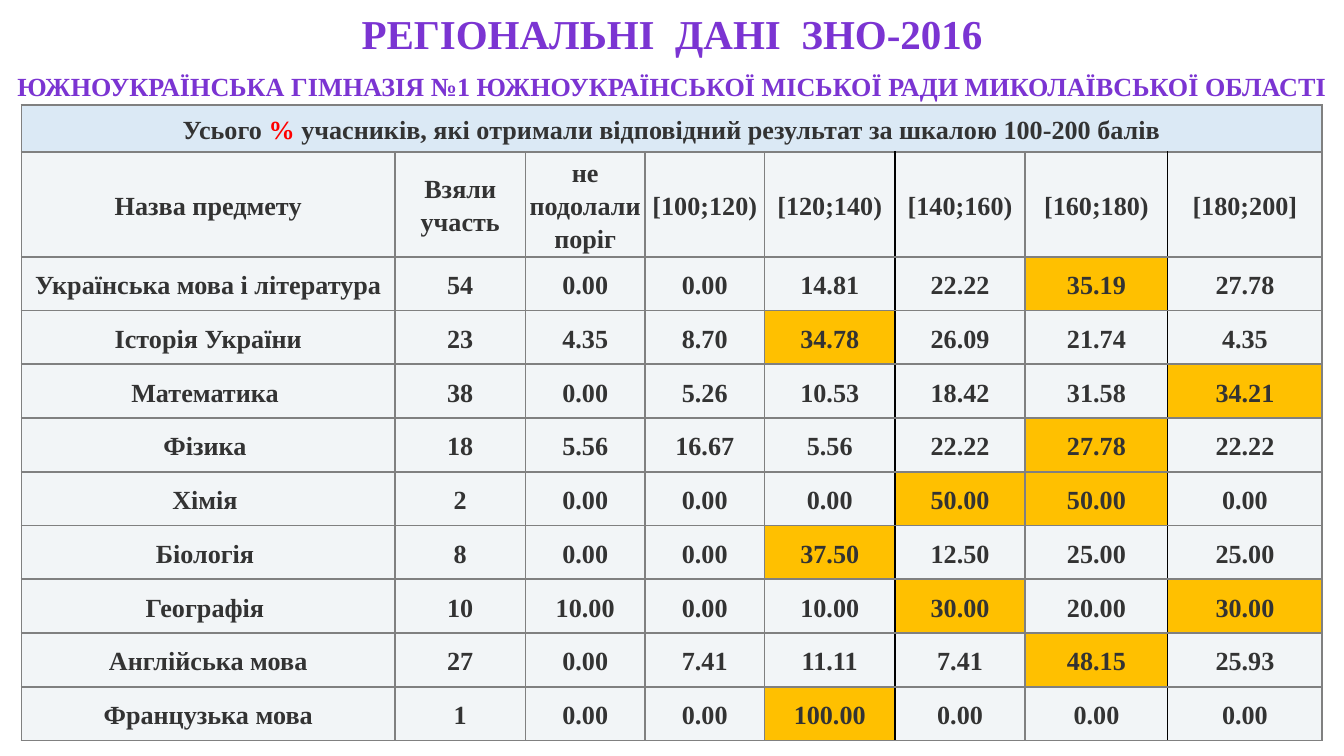
import copy

import pptx
import pptx.dml.color
import pptx.enum.text
import pptx.util
import lxml.etree

Inches, Pt = pptx.util.Inches, pptx.util.Pt
CENTER = pptx.enum.text.PP_ALIGN.CENTER
MIDDLE = pptx.enum.text.MSO_ANCHOR.MIDDLE

# Content
TITLE = "РЕГІОНАЛЬНІ  ДАНІ  ЗНО-2016"
SUBTITLE = "ЮЖНОУКРАЇНСЬКА ГІМНАЗІЯ №1 ЮЖНОУКРАЇНСЬКОЇ МІСЬКОЇ РАДИ МИКОЛАЇВСЬКОЇ ОБЛАСТІ"
CAPTION = [
    ("Усього ", "text"),
    ("%", "accent"),
    (" учасників, які отримали відповідний результат за шкалою 100-200 балів", "text"),
]
HEADINGS = ["Назва предмету", "Взяли участь", "не подолали\nпоріг", "[100;120)",
            "[120;140)", "[140;160)", "[160;180)", "[180;200]"]
# Subject, participants, then the percentage in each score band
RESULTS = [
    ("Українська мова і література", 54, (0.00, 0.00, 14.81, 22.22, 35.19, 27.78)),
    ("Історія України", 23, (4.35, 8.70, 34.78, 26.09, 21.74, 4.35)),
    ("Математика ", 38, (0.00, 5.26, 10.53, 18.42, 31.58, 34.21)),
    ("Фізика ", 18, (5.56, 16.67, 5.56, 22.22, 27.78, 22.22)),
    ("Хімія ", 2, (0.00, 0.00, 0.00, 50.00, 50.00, 0.00)),
    ("Біологія ", 8, (0.00, 0.00, 37.50, 12.50, 25.00, 25.00)),
    ("Географія ", 10, (10.00, 0.00, 10.00, 30.00, 20.00, 30.00)),
    ("Англійська мова", 27, (0.00, 7.41, 11.11, 7.41, 48.15, 25.93)),
    ("Французька мова", 1, (0.00, 0.00, 100.00, 0.00, 0.00, 0.00)),
]

THEME = {
    "font": "Times New Roman",
    "sizes": {"title": 22, "body": 14},
    "colors": {"title": "7B34D2", "text": "333333", "accent": "FF0000",
               "caption": "DBE9F5", "cell": "F2F5F7", "best": "FFC000",
               "border": "808080", "divider": "000000"},
}

# Layout
SLIDE_WIDTH = Inches(10)
SLIDE_HEIGHT = SLIDE_WIDTH * 9 // 16
COLUMN_WIDTHS = [2.78, 0.97, 0.89, 0.89, 0.97, 0.97, 1.06, 1.15]
ROW_HEIGHTS = [0.35, 0.72] + [0.4] * len(RESULTS)
TABLE_LEFT, TABLE_TOP = 0.16, 0.78
DIVIDERS = {5, 7}  # columns whose left edge is black


def color(name):
    return pptx.dml.color.RGBColor.from_string(THEME["colors"][name])


def set_attributes(target, values):
    for name, value in values.items():
        setattr(target, name, value)


def add_text(paragraph, runs, size="body"):
    paragraph.alignment = CENTER
    for text, color_name in runs:
        for line_index, line in enumerate(text.split("\n")):
            if line_index:  # the break keeps the type size of the line above
                paragraph.add_line_break()
                paragraph._p[-1].append(copy.deepcopy(run._r.rPr))
            run = paragraph.add_run()
            run.text = line
            set_attributes(run.font, {"name": THEME["font"], "bold": True,
                                      "size": Pt(THEME["sizes"][size])})
            run.font.color.rgb = color(color_name)


def set_borders(cell, edges):
    properties = cell._tc.get_or_add_tcPr()
    namespace = "{%s}" % properties.nsmap["a"]
    for edge in "LRTB":
        line = lxml.etree.SubElement(properties, f"{namespace}ln{edge}", w=str(Pt(1)))
        fill = lxml.etree.SubElement(line, f"{namespace}solidFill")
        lxml.etree.SubElement(fill, f"{namespace}srgbClr",
                              val=THEME["colors"][edges.get(edge, "border")])


def fill_cell(cell, runs, fill_name, margin, edges):
    set_borders(cell, edges)
    cell.fill.solid()
    cell.fill.fore_color.rgb = color(fill_name)
    sides = ("margin_left", "margin_right", "margin_top", "margin_bottom")
    set_attributes(cell, {"vertical_anchor": MIDDLE,
                          **dict.fromkeys(sides, Inches(margin))})
    paragraph = cell.text_frame.paragraphs[0]
    paragraph.line_spacing = 1.15
    add_text(paragraph, runs)


def add_results_table(slide):
    table = slide.shapes.add_table(
        len(ROW_HEIGHTS), len(COLUMN_WIDTHS), Inches(TABLE_LEFT), Inches(TABLE_TOP),
        Inches(sum(COLUMN_WIDTHS)), Inches(sum(ROW_HEIGHTS))).table
    set_attributes(table, {"first_row": False, "horz_banding": False})
    for column, width in zip(table.columns, COLUMN_WIDTHS):
        column.width = Inches(width)
    for row, height in zip(table.rows, ROW_HEIGHTS):
        row.height = Inches(height)

    # Caption across all columns
    table.cell(0, 0).merge(table.cell(0, len(COLUMN_WIDTHS) - 1))
    fill_cell(table.cell(0, 0), CAPTION, "caption", 0.01, {})

    # Headings and results, the highest share of each subject highlighted
    rows = [[(heading, "cell") for heading in HEADINGS]]
    for subject, participants, shares in RESULTS:
        rows.append([(subject, "cell"), (str(participants), "cell")] + [
            (f"{share:.2f}", "best" if share == max(shares) else "cell")
            for share in shares])
    for row_index, row in enumerate(rows, start=1):
        for column_index, (text, fill_name) in enumerate(row):
            edges = {}
            if column_index in DIVIDERS:
                edges["L"] = "divider"
            if column_index + 1 in DIVIDERS:
                edges["R"] = "divider"
            fill_cell(table.cell(row_index, column_index), [(text, "text")], fill_name,
                      0.02 if column_index else 0.01, edges)


def add_title(slide):
    frame = slide.shapes.add_textbox(0, 0, SLIDE_WIDTH, Inches(1.11)).text_frame
    set_attributes(frame, {"word_wrap": True, "margin_top": Inches(0.06),
                           "margin_left": Inches(0.1), "margin_right": Inches(0.1)})
    add_text(frame.paragraphs[0], [(TITLE, "title")], "title")
    subtitle = frame.add_paragraph()
    subtitle.space_before = Pt(7)
    add_text(subtitle, [(SUBTITLE, "title")])


def main():
    presentation = pptx.Presentation()
    set_attributes(presentation, {"slide_width": SLIDE_WIDTH, "slide_height": SLIDE_HEIGHT})
    slide = presentation.slides.add_slide(presentation.slide_layouts[6])
    add_results_table(slide)
    add_title(slide)
    presentation.save("out.pptx")


if __name__ == "__main__":
    main()
